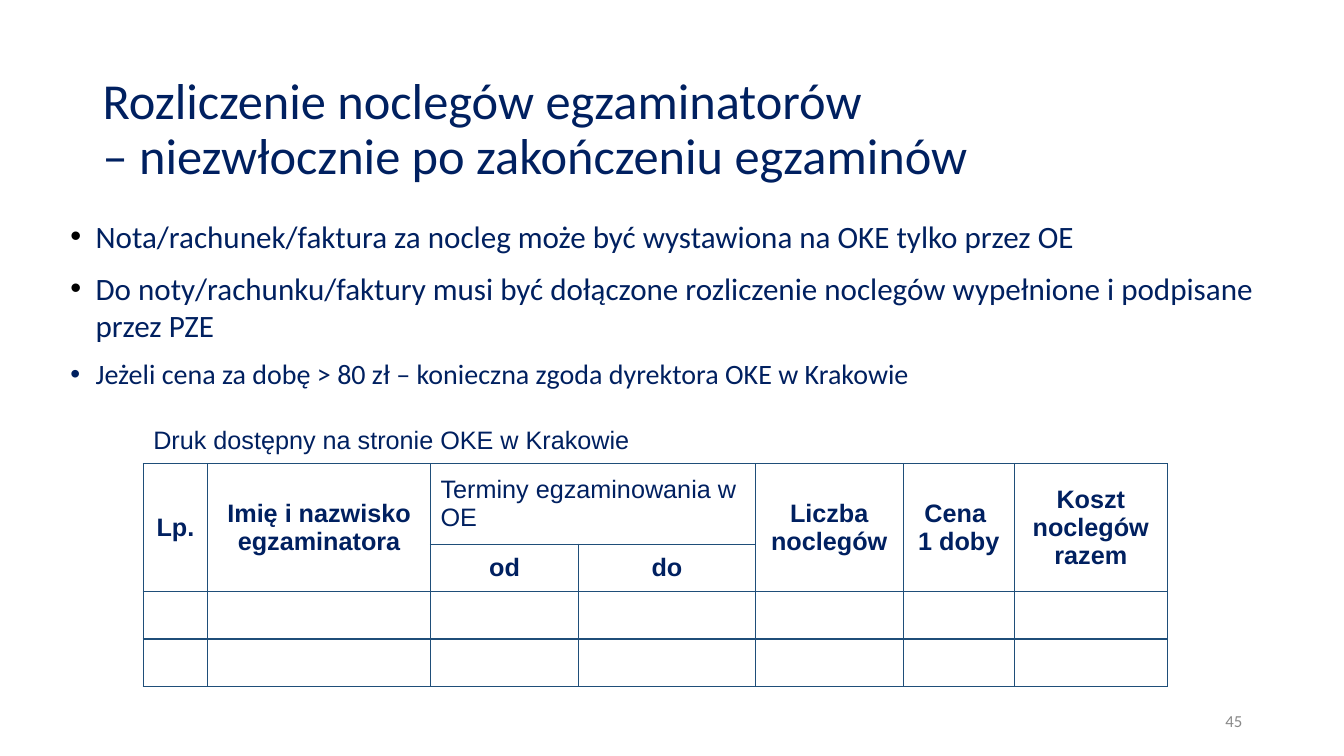
import pptx
import pptx.util
from lxml import etree
from pptx.dml.color import RGBColor
from pptx.enum.text import MSO_ANCHOR, PP_ALIGN
from pptx.oxml.ns import qn
from pptx.util import Inches, Pt

NAVY = RGBColor(0x00, 0x20, 0x60)
GRAY = RGBColor(0x89, 0x89, 0x89)
BLACK = RGBColor(0x00, 0x00, 0x00)
BORDER = RGBColor(0x1F, 0x4E, 0x79)

TITLE = "Rozliczenie noclegów egzaminatorów \v– niezwłocznie po zakończeniu egzaminów"
RULES = [
    "Nota/rachunek/faktura za nocleg może być wystawiona na OKE tylko przez OE",
    "Do noty/rachunku/faktury musi być dołączone rozliczenie noclegów wypełnione "
    "i podpisane przez PZE",
]
PRICE_LIMIT = "Jeżeli cena za dobę > 80 zł – konieczna zgoda dyrektora OKE w Krakowie"
PAGE_NUMBER = "45"

COLUMN_WIDTHS = [0.64, 2.21, 1.47, 1.75, 1.47, 1.1, 1.52]
ROW_HEIGHTS = [0.46, 0.8, 0.47, 0.47, 0.47]
CAPTION = "Druk dostępny na stronie OKE w Krakowie"
DATES = "Terminy egzaminowania w OE"
CELLS = [
    [CAPTION],
    ["Lp.", "Imię i nazwisko egzaminatora", DATES, "", "Liczba noclegów",
     "Cena \v1 doby", "Koszt noclegów razem"],
    ["", "", "od", "do"],
]
# First and last (row, column) of each merged area
MERGES = [((0, 0), (0, 6)), ((1, 2), (1, 3))]
MERGES += [((1, column), (2, column)) for column in (0, 1, 4, 5, 6)]


def add_text(slide, box, paragraphs, size, color=NAVY, anchor=MSO_ANCHOR.TOP,
             align=PP_ALIGN.LEFT, line_spacing=None, bullet_color=None):
    frame = slide.shapes.add_textbox(*map(Inches, box)).text_frame
    frame.word_wrap = True
    frame.vertical_anchor = anchor
    for index, text in enumerate(paragraphs):
        paragraph = frame.add_paragraph() if index else frame.paragraphs[0]
        paragraph.text = text
        paragraph.alignment = align
        if line_spacing:
            paragraph.line_spacing = line_spacing
        if index:
            paragraph.space_before = Pt(10)
        if bullet_color is not None:
            add_bullet(paragraph, bullet_color)
        style_font(paragraph.font, "Calibri", size, color)


def style_font(font, name, size, color, bold=False):
    font.name = name
    font.size = Pt(size)
    font.bold = bold
    font.color.rgb = color


def add_bullet(paragraph, color):
    properties = paragraph._p.get_or_add_pPr()
    properties.set("marL", str(Inches(0.25)))
    properties.set("indent", str(Inches(-0.25)))
    bullet_color = etree.SubElement(properties, qn("a:buClr"))
    etree.SubElement(bullet_color, qn("a:srgbClr"), val=str(color))
    etree.SubElement(properties, qn("a:buFont"), typeface="Arial")
    etree.SubElement(properties, qn("a:buChar"), char="•")


def visible_edges(row, column):
    """Return the sides to draw, leaving out those inside a merged area."""
    if row == 0:
        return "B"
    for (top, left), (bottom, right) in MERGES:
        if top <= row <= bottom and left <= column <= right:
            sides = {"L": column == left, "R": column == right,
                     "T": row == top, "B": row == bottom}
            return "".join(side for side, outer in sides.items() if outer)
    return "LRTB"


def draw_borders(cell, edges):
    properties = cell._tc.get_or_add_tcPr()
    for edge in edges:
        line = etree.SubElement(properties, qn("a:ln" + edge), w=str(Pt(1)))
        fill = etree.SubElement(line, qn("a:solidFill"))
        etree.SubElement(fill, qn("a:srgbClr"), val=str(BORDER))


def add_lodging_table(slide):
    table = slide.shapes.add_table(
        len(ROW_HEIGHTS), len(COLUMN_WIDTHS), Inches(1.42), Inches(4.14),
        Inches(sum(COLUMN_WIDTHS)), Inches(sum(ROW_HEIGHTS))).table
    table.first_row = table.horz_banding = False
    for column, width in zip(table.columns, COLUMN_WIDTHS):
        column.width = Inches(width)
    for row, height in zip(table.rows, ROW_HEIGHTS):
        row.height = Inches(height)
    for first, last in MERGES:
        table.cell(*first).merge(table.cell(*last))
    for row in range(len(ROW_HEIGHTS)):
        for column in range(len(COLUMN_WIDTHS)):
            cell = table.cell(row, column)
            draw_borders(cell, visible_edges(row, column))
            cell.fill.background()
            cell.vertical_anchor = MSO_ANCHOR.MIDDLE
            texts = CELLS[row] if row < len(CELLS) else []
            text = texts[column] if column < len(texts) else ""
            if text:
                cell.text = text
            heading = text not in (CAPTION, DATES)
            paragraph = cell.text_frame.paragraphs[0]
            paragraph.alignment = PP_ALIGN.CENTER if heading else PP_ALIGN.LEFT
            style_font(paragraph.font, "Arial", 18, NAVY, bold=heading)


def main():
    presentation = pptx.Presentation()
    presentation.slide_width = Inches(13.33)
    presentation.slide_height = Inches(7.5)
    slide = presentation.slides.add_slide(presentation.slide_layouts[6])

    add_text(slide, (0.92, 0.57, 11.5, 1.45), [TITLE], 36,
             anchor=MSO_ANCHOR.MIDDLE, line_spacing=0.9)
    add_text(slide, (0.6, 3.53, 11.82, 0.5), [PRICE_LIMIT], 20,
             line_spacing=0.9, bullet_color=NAVY)
    add_text(slide, (9.42, 6.95, 3, 0.4), [PAGE_NUMBER], 12, GRAY,
             MSO_ANCHOR.MIDDLE, PP_ALIGN.RIGHT)
    add_lodging_table(slide)
    add_text(slide, (0.6, 2.11, 12.36, 1.42), RULES, 22.2, bullet_color=BLACK)

    presentation.save("out.pptx")


if __name__ == "__main__":
    main()
